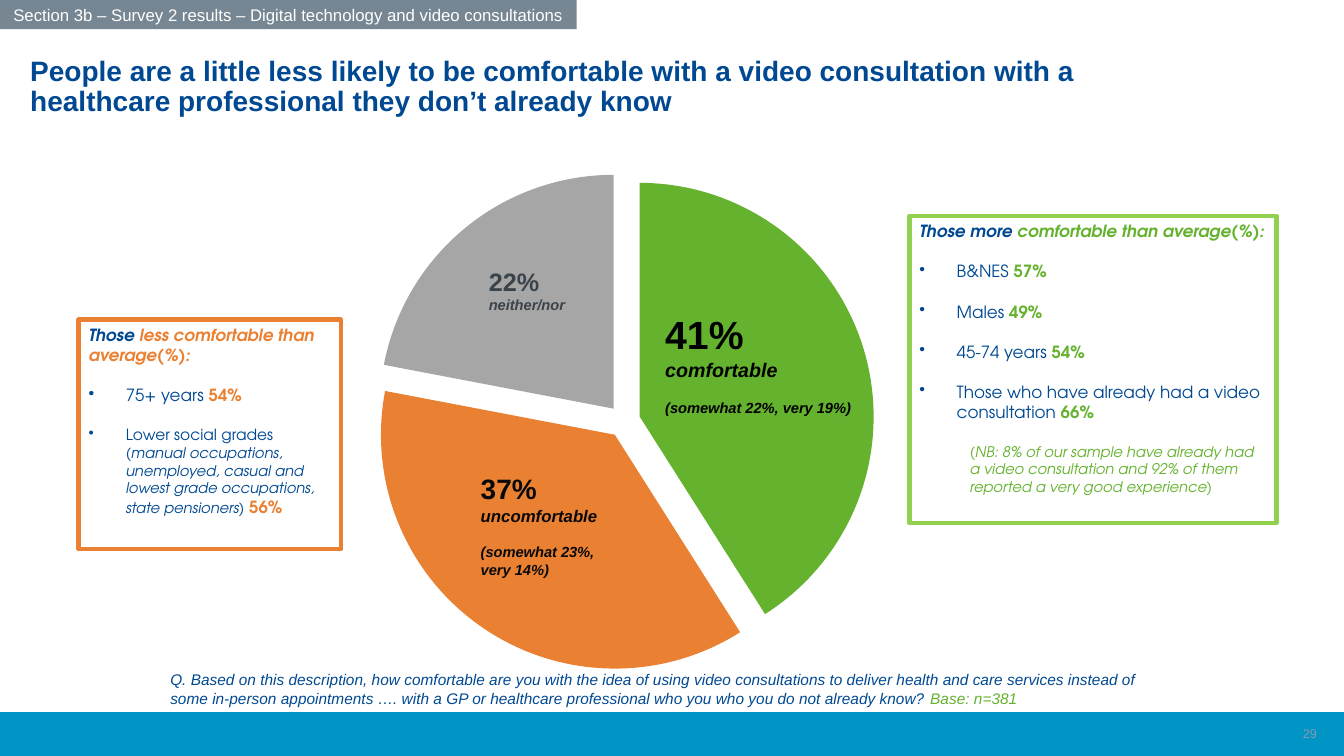
from lxml import etree
from pptx import Presentation, util as u
from pptx.chart.data import CategoryChartData
from pptx.dml.color import RGBColor
from pptx.enum import chart as ch, shapes, text
from pptx.oxml import ns

SANS, GEO = "Arial", "TeX Gyre Adventor"
NAVY, GREEN, ORANGE, GREY = "004992", "64B22D", "EA8132", "A6A6A6"

deck = Presentation()
deck.slide_width, deck.slide_height = u.Inches(13.33), u.Inches(7.5)
slide = deck.slides.add_slide(deck.slide_layouts[6])


def rgb(code):
    return RGBColor.from_string(code)


def place(box):
    """Turn percentages of the slide into left, top, width and height."""
    sides = (deck.slide_width, deck.slide_height) * 2
    return [round(part * side / 100) for part, side in zip(box, sides)]


def style_font(font, size=None, hue=None, look=None, face=None):
    """Set what is given; look holds b for bold and i for italic."""
    if size:
        font.size = u.Pt(size)
    if hue:
        font.color.rgb = rgb(hue)
    if look is not None:
        font.bold, font.italic = "b" in look, "i" in look
    if face:
        font.name = face


def para(frame, *runs, gap=0, left=0, bullet=False, align=None, lead=None, **base):
    """Add a paragraph; a run is a string or a (string, overrides) pair."""
    p = frame.paragraphs[0]
    if p.runs:
        p = frame.add_paragraph()
        p.space_before = u.Pt(gap)
    p.alignment = align or text.PP_ALIGN.LEFT
    if lead:
        p.line_spacing = lead
    props = p._p.get_or_add_pPr()
    if left:
        props.set("marL", str(u.Inches(left)))
        props.set("indent", str(u.Inches(-left if bullet else 0)))
    if bullet:
        etree.SubElement(props, ns.qn("a:buChar")).set("char", "•")
    style_font(p.font, **base)
    for item in runs:
        words, extra = (item, {}) if isinstance(item, str) else item
        run = p.add_run()
        run.text = words
        if extra:
            style_font(run.font, **extra)


def text_box(box, wrap=True, grow=True, side=0.1):
    frame = slide.shapes.add_textbox(*place(box)).text_frame
    frame.word_wrap = wrap
    if grow:
        frame.auto_size = text.MSO_AUTO_SIZE.SHAPE_TO_FIT_TEXT
    frame.margin_left = frame.margin_right = u.Inches(side)
    return frame


def panel(box, fill=None, line=None, width=1):
    shape = slide.shapes.add_shape(shapes.MSO_SHAPE.RECTANGLE, *place(box))
    shape.shadow.inherit = False
    if fill:
        shape.fill.solid()
        shape.fill.fore_color.rgb = rgb(fill)
    else:
        shape.fill.background()
    if line:
        shape.line.color.rgb = rgb(line)
        shape.line.width = u.Pt(width)
    else:
        shape.line.fill.background()
    frame = shape.text_frame
    frame.word_wrap = True
    frame.vertical_anchor = text.MSO_ANCHOR.MIDDLE if fill else text.MSO_ANCHOR.TOP
    return frame


def pie(box, values, hues):
    data = CategoryChartData()
    data.categories = [str(n + 1) for n in range(len(values))]
    data.add_series("Series 1", values)
    chart = slide.shapes.add_chart(ch.XL_CHART_TYPE.PIE, *place(box), data).chart
    chart.has_title = chart.has_legend = False
    style_font(chart.font, 10, NAVY, face=SANS)
    plot = chart.plots[0]
    plot.vary_by_categories = True
    series = plot.series[0]
    for n, hue in enumerate(hues):
        fill = series.points[n].format.fill
        fill.solid()
        fill.fore_color.rgb = rgb(hue)
    burst = etree.Element(ns.qn("c:explosion"), val="7")
    series._element.find(ns.qn("c:dPt")).addprevious(burst)


def slice_label(box, share, name, notes, hue, sizes):
    frame = text_box(box, wrap=False)
    for words, size, look in zip((share, name), sizes, ("b", "bi")):
        para(frame, words, size=size, hue=hue, look=look, face=SANS)
    for n, note in enumerate(notes):
        para(frame, note, gap=0 if n else 12.6, size=10.5, hue=hue, look="bi", face=SANS)


def group_box(box, edge, hue, head, items, note=None):
    """Framed list: head is a pair, each item is its runs and a percentage."""
    frame = panel(box, line=edge, width=3)
    para(frame, head[0], (head[1], {"hue": hue}), size=12, hue=NAVY, look="bi", face=GEO)
    for *runs, share in items:
        para(frame, *runs, (share, {"hue": hue, "look": "b"}), gap=14.4, left=0.37,
             bullet=True, size=12, hue=NAVY, look="", face=GEO)
    if note:
        para(frame, note, gap=14.4, left=0.5, size=10.5, hue=hue, look="i", face=GEO)


def footer(box, number):
    panel(box, "0095C4", "0095C4")
    frame = text_box((76.22, box[1] + 0.13, 22.5, 5.33), grow=False)
    frame.vertical_anchor = text.MSO_ANCHOR.MIDDLE
    para(frame, number, align=text.PP_ALIGN.RIGHT, size=9, hue="8C95B6", face=SANS)


def header(tab, box, section, title):
    para(panel(tab, "768692"), section, align=text.PP_ALIGN.CENTER,
         size=12, hue="FFFFFF", face=SANS)
    para(text_box(box, grow=False, side=0.24), title, lead=0.9,
         size=20, hue=NAVY, look="b", face=SANS)


def question(box, words, base):
    para(text_box(box), words, (base, {"hue": "65B22E"}),
         size=11, hue=NAVY, look="i", face=SANS)


footer((0, 94.27, 100, 5.73), "29")
pie((15.6, 20.8, 61.67, 69.87), (41, 37, 22, None), (GREEN, ORANGE, GREY, "00ABC1"))
header((0, 0, 42.91, 3.87), (0.45, 6.93, 92.35, 15.07),
       "Section 3b – Survey 2 results – Digital technology and video consultations",
       "People are a little less likely to be comfortable with a video consultation "
       "with a healthcare professional they don’t already know")
slice_label((48.76, 40.4, 15.6, 15.6), "41%", "comfortable",
            ["(somewhat 22%, very 19%)"], "000000", (28, 14))
slice_label((35.03, 61.73, 10.43, 15.73), "37%", "uncomfortable",
            ["(somewhat 23%,", "very 14%)"], "080808", (20, 12))
slice_label((35.63, 34.53, 7.28, 7.73), "22%", "neither/nor", [], "3A434A", (18, 10.5))
group_box((67.67, 28.53, 27.31, 40.67), "92D050", GREEN,
          ("Those more ", "comfortable than average(%):"),
          [("B&NES ", "57%"), ("Males ", "49%"), ("45-74 years ", "54%"),
           ("Those who have already had a video consultation ", "66%")],
          "(NB: 8% of our sample have already had a video consultation "
          "and 92% of them reported a very good experience)")
group_box((5.85, 42.27, 19.5, 30.4), ORANGE, ORANGE,
          ("Those ", "less comfortable than average(%):"),
          [("75+ years ", "54%"),
           (("Lower social grades ", {"size": 11}),
            ("(manual occupations, unemployed, casual and lowest grade occupations, "
             "state pensioners)", {"size": 10.5, "look": "i"}), " ", "56%")])
question((11.93, 88, 76.22, 6.27),
         "Q. Based on this description, how comfortable are you with the idea of using "
         "video consultations to deliver health and care services instead of some "
         "in-person appointments …. with a GP or healthcare professional who you who "
         "you do not already know? ", "Base: n=381")
deck.save("out.pptx")
